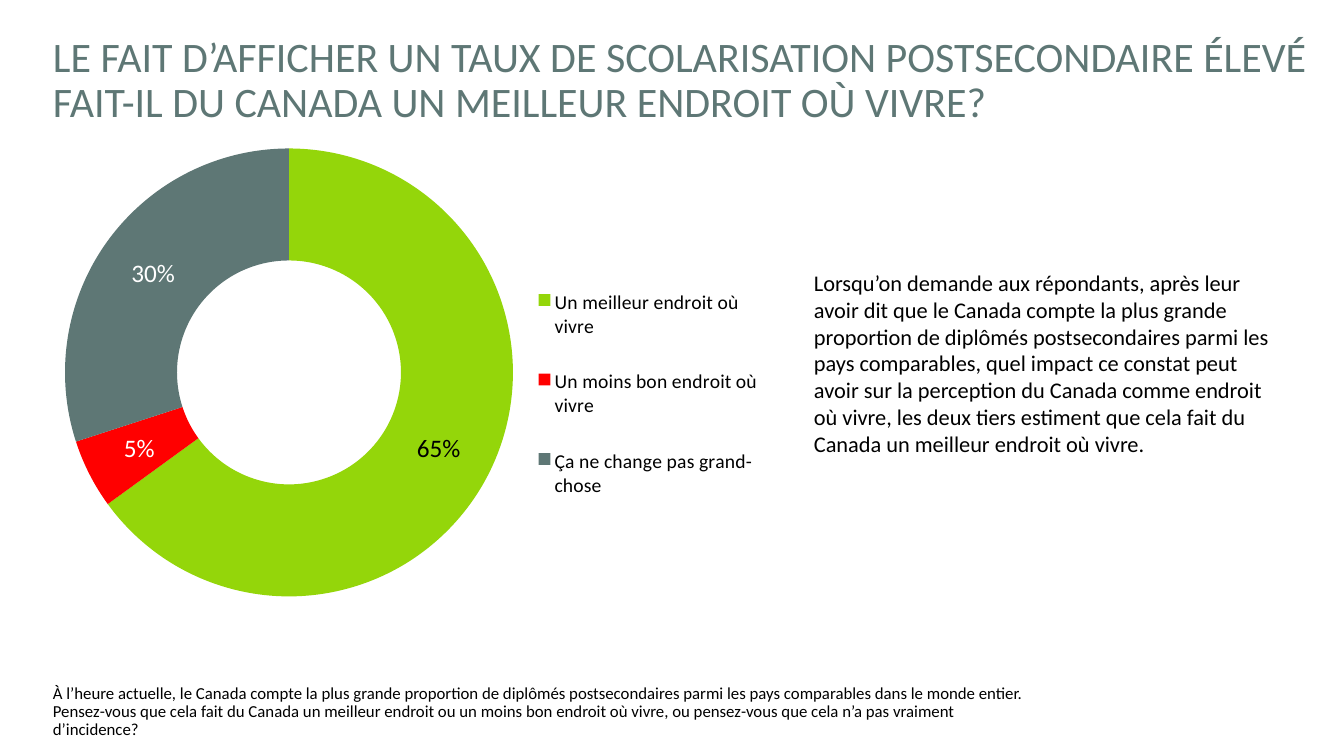
from dataclasses import dataclass

from lxml.etree import SubElement
from pptx import Presentation
from pptx.chart.data import CategoryChartData
from pptx.dml.color import RGBColor
from pptx.enum.chart import XL_CHART_TYPE, XL_LEGEND_POSITION
from pptx.enum.text import MSO_ANCHOR
from pptx.oxml.ns import qn
from pptx.util import Emu, Pt


@dataclass(frozen=True)
class Theme:
    font: str = "Calibri"
    slate: str = "5E7775"
    green: str = "94D60A"
    red: str = "FF0000"
    black: str = "000000"
    white: str = "FFFFFF"
    title: int = 30
    label: int = 18
    body: int = 16
    legend: int = 14
    note: int = 12


THEME = Theme()
EMU_PER_PX = 914400 / 100.8

TITLE = (
    "LE FAIT D’AFFICHER UN TAUX DE SCOLARISATION POSTSECONDAIRE ÉLEVÉ "
    "FAIT-IL DU CANADA UN MEILLEUR ENDROIT OÙ VIVRE?"
)
COMMENTARY = (
    "Lorsqu’on demande aux répondants, après leur avoir dit que le Canada compte "
    "la plus grande proportion de diplômés postsecondaires parmi les pays comparables, "
    "quel impact ce constat peut avoir sur la perception du Canada comme endroit où vivre, "
    "les deux tiers estiment que cela fait du Canada un meilleur endroit où vivre."
)
QUESTION = (
    "À l’heure actuelle, le Canada compte la plus grande proportion de diplômés "
    "postsecondaires parmi les pays comparables dans le monde entier. Pensez-vous que "
    "cela fait du Canada un meilleur endroit ou un moins bon endroit où vivre, ou "
    "pensez-vous que cela n’a pas vraiment d’incidence?"
)
ANSWERS = [
    ("Un meilleur endroit où vivre", 65, THEME.green, THEME.black),
    ("Un moins bon endroit où vivre", 5, THEME.red, THEME.white),
    ("Ça ne change pas grand-chose", 30, THEME.slate, THEME.white),
]
CHART_BOX = (50, 112, 717, 520)
RING_BOX = (65, 148, 448, 449)
LEGEND_BOX = (529, 259, 238, 270)


def px(length):
    """Convert a length in px to EMU."""
    return Emu(round(length * EMU_PER_PX))


def style_font(font, size, color):
    """Apply the theme typeface with a size and colour."""
    font.name = THEME.font
    font.size = Pt(size)
    font.color.rgb = RGBColor.from_string(color)


def add_text(slide, text, *, box, size, color=THEME.black,
             anchor=MSO_ANCHOR.TOP, line_spacing=1.0):
    """Add a wrapped text box holding one paragraph."""
    shape = slide.shapes.add_textbox(*map(px, box))
    frame = shape.text_frame
    frame.word_wrap = True
    frame.vertical_anchor = anchor
    paragraph = frame.paragraphs[0]
    paragraph.line_spacing = line_spacing
    run = paragraph.add_run()
    run.text = text
    style_font(run.font, size, color)


def place_in_chart(element, box, *, inner=False):
    """Fix a chart part at a px box within the chart frame."""
    layout = element.find(qn("c:layout"))
    if layout is None:
        layout = SubElement(element, qn("c:layout"))
        anchor = element.find(qn("c:legendPos"))
        if anchor is not None:
            anchor.addnext(layout)
        else:
            element.insert(0, layout)
    manual = SubElement(layout, qn("c:manualLayout"))
    settings = [("layoutTarget", "inner")] if inner else []
    settings += [("xMode", "edge"), ("yMode", "edge")]
    left, top, width, height = CHART_BOX
    fractions = ((box[0] - left) / width, (box[1] - top) / height,
                 box[2] / width, box[3] / height)
    settings += [(key, f"{value:.4f}") for key, value in zip("xywh", fractions)]
    for name, value in settings:
        SubElement(manual, qn(f"c:{name}")).set("val", value)


def style_slices(series):
    """Colour each slice and show its percentage."""
    labels = series.data_labels
    labels.show_value = False
    labels.show_percentage = True
    labels.number_format = "0%"
    labels.number_format_is_linked = False
    style_font(labels.font, THEME.label, THEME.white)
    for index, (_, _, fill, label_color) in enumerate(ANSWERS):
        point = series.points[index]
        point.format.fill.solid()
        point.format.fill.fore_color.rgb = RGBColor.from_string(fill)
        point.format.line.fill.background()
        if label_color != THEME.white:
            style_font(point.data_label.font, THEME.label, label_color)
    for label in series._element.iter(qn("c:dLbl")):
        label.find(qn("c:showVal")).set("val", "0")
        label.find(qn("c:showPercent")).set("val", "1")


def add_doughnut(slide):
    """Add the doughnut of answers with its legend."""
    data = CategoryChartData(number_format="General")
    data.categories = [answer[0] for answer in ANSWERS]
    data.add_series("Series 1", [answer[1] for answer in ANSWERS])
    frame = slide.shapes.add_chart(
        XL_CHART_TYPE.DOUGHNUT, *map(px, CHART_BOX), data)
    chart = frame.chart
    chart.has_title = False
    style_font(chart.font, THEME.label, THEME.black)
    chart.has_legend = True
    legend = chart.legend
    legend.position = XL_LEGEND_POSITION.RIGHT
    legend.include_in_layout = False
    style_font(legend.font, THEME.legend, THEME.black)
    style_slices(chart.plots[0].series[0])
    plot_area = chart.plots[0]._element.getparent()
    place_in_chart(plot_area, RING_BOX, inner=True)
    place_in_chart(legend._element, LEGEND_BOX)


def main():
    """Build and save the slide."""
    presentation = Presentation()
    presentation.slide_width = px(1344)
    presentation.slide_height = px(756)
    slide = presentation.slides.add_slide(presentation.slide_layouts[6])
    add_text(slide, TITLE, box=(43, 30, 1282, 103), size=THEME.title,
             color=THEME.slate, anchor=MSO_ANCHOR.MIDDLE, line_spacing=0.9)
    add_text(slide, QUESTION, box=(43, 675, 1005, 74), size=THEME.note,
             anchor=MSO_ANCHOR.MIDDLE, line_spacing=0.9)
    add_doughnut(slide)
    add_text(slide, COMMENTARY, box=(804, 264, 485, 228), size=THEME.body)
    presentation.save("out.pptx")


if __name__ == "__main__":
    main()
